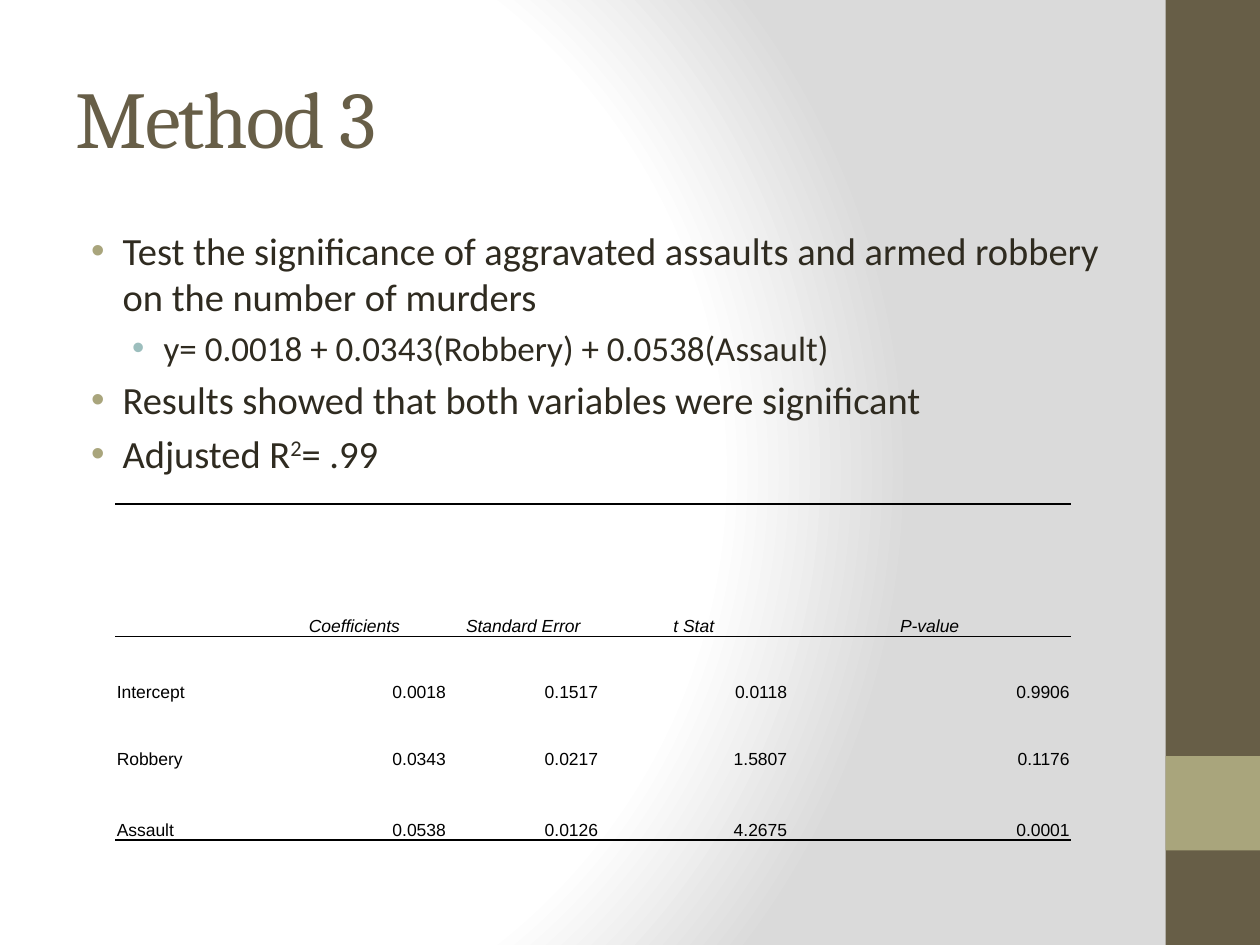
from lxml import etree
from pptx import Presentation, util as u
from pptx.dml.color import RGBColor
from pptx.enum import shapes, text
from pptx.oxml.ns import qn

Pt = u.Pt


def color(value):
    return RGBColor.from_string(value)


def child(parent, tag, **attributes):
    return etree.SubElement(parent, qn(tag), attributes)


class SlideBuilder:
    brown, olive, teal, ink = "675E47", "A9A57C", "9CBEBD", "2F2B20"
    black = "000000"
    heading_font, body_font, table_font = "Cambria", "Calibri", "Arial"
    body_sizes = (22, 20)
    body_indents = (27, 50.4)
    bullet_colors = (olive, teal)
    hanging = 18

    def __init__(self, slide):
        self.slide = slide

    def format_run(self, run, font, size, value, italic=False):
        run.font.name = font
        run.font.size = Pt(size)
        run.font.italic = italic
        run.font.color.rgb = color(value)

    def background(self, stops):
        self.slide.background.fill.solid()
        properties = self.slide.element.find(".//" + qn("p:bgPr"))
        properties.remove(properties[0])
        gradient = etree.Element(qn("a:gradFill"), rotWithShape="1")
        properties.insert(0, gradient)
        stop_list = child(gradient, "a:gsLst")
        for position, value in stops:
            stop = child(stop_list, "a:gs", pos=str(position * 1000))
            child(stop, "a:srgbClr", val=value)
        circle = child(gradient, "a:path", path="circle")
        child(circle, "a:fillToRect", l="20000", t="50000", r="100000", b="50000")

    def rectangle(self, left, top, width, height, fill):
        shape = self.slide.shapes.add_shape(
            shapes.MSO_SHAPE.RECTANGLE, Pt(left), Pt(top), Pt(width), Pt(height))
        shape.shadow.inherit = False
        shape.fill.solid()
        shape.fill.fore_color.rgb = color(fill)
        shape.line.fill.background()

    def title(self, wording, left, top, width, height):
        shape = self.slide.shapes.title
        shape.left, shape.top = Pt(left), Pt(top)
        shape.width, shape.height = Pt(width), Pt(height)
        frame = shape.text_frame
        frame.text = wording
        frame.vertical_anchor = text.MSO_ANCHOR.MIDDLE
        paragraph = frame.paragraphs[0]
        paragraph.alignment = text.PP_ALIGN.LEFT
        run = paragraph.runs[0]
        self.format_run(run, self.heading_font, 46, self.brown)
        run.font._element.set("spc", "-100")

    def bullets(self, items, left, top, width, height):
        shape = self.slide.shapes.add_textbox(Pt(left), Pt(top), Pt(width), Pt(height))
        frame = shape.text_frame
        frame.word_wrap = True
        for index, (level, wording, *more) in enumerate(items):
            paragraph = frame.add_paragraph() if index else frame.paragraphs[0]
            paragraph.text = wording
            paragraph.level = level
            size = self.body_sizes[level]
            paragraph.space_before = Pt(size * 0.2)
            for part in more:
                paragraph.add_run().text = part
            for position, run in enumerate(paragraph.runs):
                self.format_run(run, self.body_font, size, self.ink)
                if position == 1:
                    run.font._element.set("baseline", "30000")
            properties = paragraph._p.get_or_add_pPr()
            properties.set("marL", str(Pt(self.body_indents[level])))
            properties.set("indent", str(-Pt(self.hanging)))
            bullet_color = child(properties, "a:buClr")
            child(bullet_color, "a:srgbClr", val=self.bullet_colors[level])
            child(properties, "a:buFont", typeface="Arial")
            child(properties, "a:buChar", char="•")

    def borders(self, cell, top, bottom):
        properties = cell._tc.get_or_add_tcPr()
        sides = {"a:lnL": 0, "a:lnR": 0, "a:lnT": top, "a:lnB": bottom}
        for index, (tag, width) in enumerate(sides.items()):
            line = etree.Element(qn(tag), w=str(Pt(width)))
            if width:
                child(child(line, "a:solidFill"), "a:srgbClr", val=self.black)
            else:
                child(line, "a:noFill")
            properties.insert(index, line)

    def table(self, rows, left, top, widths, heights, rules):
        shape = self.slide.shapes.add_table(
            len(rows), len(widths), Pt(left), Pt(top), Pt(sum(widths)), Pt(sum(heights)))
        table = shape.table
        table.first_row = table.horz_banding = False
        for column, width in zip(table.columns, widths):
            column.width = Pt(width)
        for row, height in zip(table.rows, heights):
            row.height = Pt(height)
        for r, values in enumerate(rows):
            for c, value in enumerate(values):
                self.cell(table.cell(r, c), value, r == 0, c == 0)
                self.borders(table.cell(r, c), rules[r], rules[r + 1])

    def cell(self, cell, value, header, label):
        cell.fill.background()
        cell.vertical_anchor = text.MSO_ANCHOR.BOTTOM
        cell.margin_left = cell.margin_right = cell.margin_top = Pt(0.75)
        cell.margin_bottom = 0
        cell.text_frame.text = value
        paragraph = cell.text_frame.paragraphs[0]
        align = text.PP_ALIGN
        paragraph.alignment = align.CENTER if header else align.LEFT if label else align.RIGHT
        for run in paragraph.runs:
            self.format_run(run, self.table_font, 10, self.black, header)


def main():
    presentation = Presentation()
    presentation.slide_width, presentation.slide_height = Pt(720), Pt(540)
    builder = SlideBuilder(presentation.slides.add_slide(presentation.slide_layouts[5]))

    builder.background([(0, "FFFFFF"), (75, "FFFFFF"), (100, "DADADA")])
    builder.rectangle(666, 0, 54, 540, builder.brown)
    builder.rectangle(666, 432, 54, 54, builder.olive)
    builder.title("Method 3", 36, 21.6, 600, 90)
    builder.bullets([
        (0, "Test the significance of aggravated assaults and armed robbery "
            "on the number of murders"),
        (1, "y= 0.0018 + 0.0343(Robbery) + 0.0538(Assault)"),
        (0, "Results showed that both variables were significant"),
        (0, "Adjusted R", "2", "= .99"),
    ], 36, 126, 600, 378)
    builder.table([
        ("", "Coefficients", "Standard Error", "t Stat", "P-value"),
        ("Intercept", "0.0018", "0.1517", "0.0118", "0.9906"),
        ("Robbery", "0.0343", "0.0217", "1.5807", "0.1176"),
        ("Assault", "0.0538", "0.0126", "4.2675", "0.0001"),
    ], 66, 288, (83.5, 106, 87, 108, 161.5), (75.6, 38, 38, 40.4), (1, 0.5, 0, 0, 1))

    presentation.save("out.pptx")


if __name__ == "__main__":
    main()
